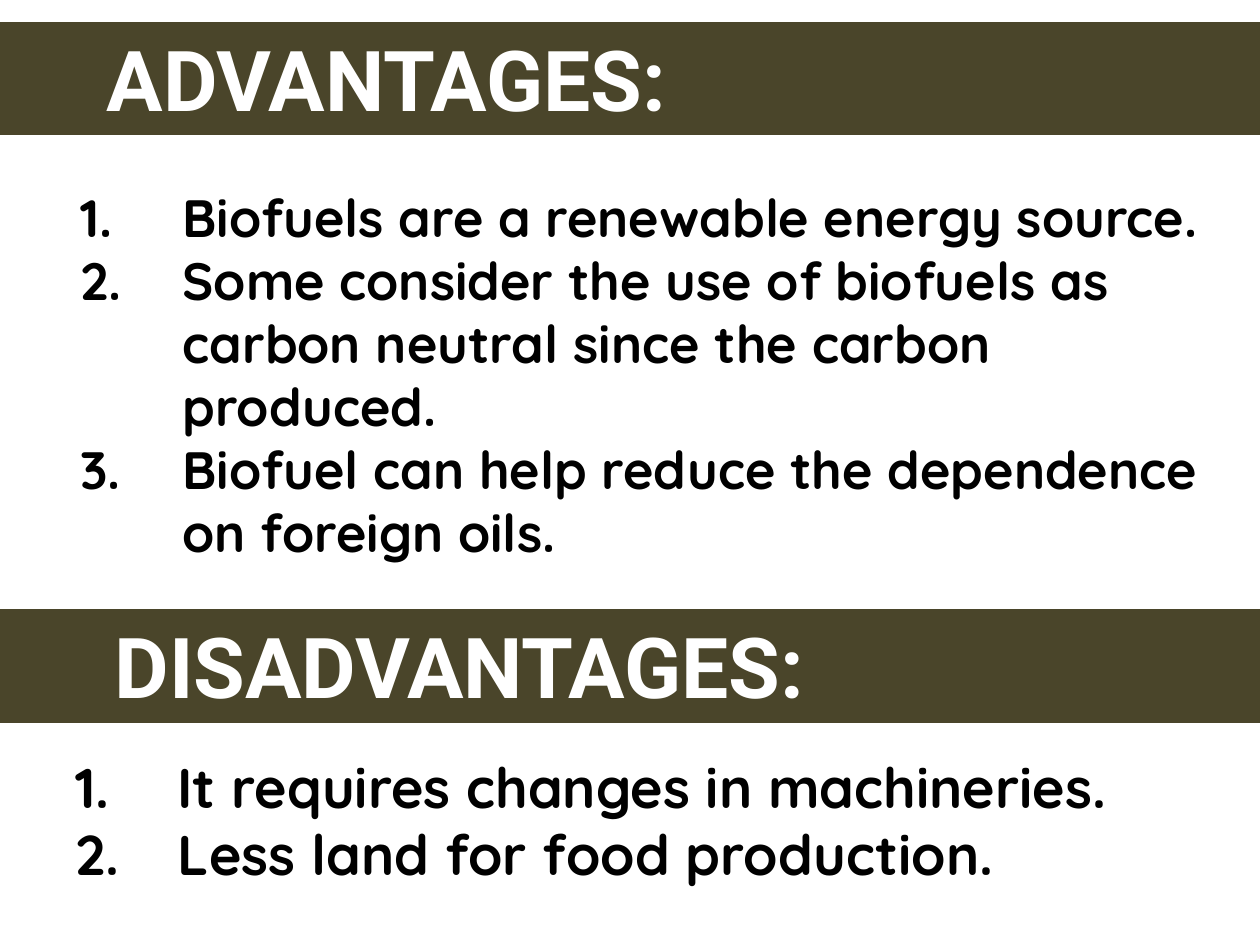
import pptx
import pptx.dml.color
import pptx.enum.shapes
import pptx.enum.text
import pptx.oxml.ns
import pptx.util
from lxml import etree
from pptx.util import Cm

BAND = "4A452A"
WHITE = "FFFFFF"
BLACK = "000000"


def color(hex_string):
    """Turn a hex string into a colour."""
    return pptx.dml.color.RGBColor.from_string(hex_string)


def add_child(parent, tag, **attributes):
    """Append a drawing element with the given attributes."""
    return etree.SubElement(parent, pptx.oxml.ns.qn(tag), attributes)


def add_box(slide, left, top, width, height, fill):
    """Add a filled, unshadowed rectangle with top-left wrapped text."""
    box = slide.shapes.add_shape(
        pptx.enum.shapes.MSO_SHAPE.RECTANGLE, Cm(left), Cm(top), Cm(width), Cm(height))
    box.shadow.inherit = False
    box.fill.solid()
    box.fill.fore_color.rgb = color(fill)
    box.text_frame.word_wrap = True
    box.text_frame.vertical_anchor = pptx.enum.text.MSO_ANCHOR.TOP
    return box


def style_paragraph(paragraph, font_name, size, hex_string):
    """Set left alignment and a bold font on a paragraph."""
    paragraph.alignment = pptx.enum.text.PP_ALIGN.LEFT
    paragraph.font.name = font_name
    paragraph.font.size = pptx.util.Pt(size)
    paragraph.font.bold = True
    paragraph.font.color.rgb = color(hex_string)


def add_heading(slide, left, top, width, title):
    """Add a dark band with a tabbed heading."""
    band = add_box(slide, left, top, width, 2.31, BAND)
    band.line.color.rgb = color(WHITE)
    band.line.width = pptx.util.Pt(0.75)
    heading = band.text_frame.paragraphs[0]
    heading.text = "\t" + title
    tabs = add_child(heading._p.get_or_add_pPr(), "a:tabLst")
    add_child(tabs, "a:tab", pos=str(Cm(2.54)), algn="l")
    style_paragraph(heading, "Roboto", 48, WHITE)


def add_numbered_list(slide, left, top, width, height, size, points):
    """Add a half-transparent panel with an automatically numbered list."""
    panel = add_box(slide, left, top, width, height, WHITE)
    panel.line.fill.background()
    panel_color = panel.fill._xPr.find(".//" + pptx.oxml.ns.qn("a:srgbClr"))
    add_child(panel_color, "a:alpha", val="50000")
    frame = panel.text_frame
    for index, point in enumerate(points):
        item = frame.add_paragraph() if index else frame.paragraphs[0]
        item.text = point
        item.level = 1
        properties = item._p.get_or_add_pPr()
        properties.set("marL", str(Cm(3.33)))
        properties.set("indent", str(Cm(-2.06)))
        add_child(properties, "a:buFont", typeface="+mj-lt")
        add_child(properties, "a:buAutoNum", type="arabicPeriod")
        style_paragraph(item, "Quicksand", size, BLACK)


def main():
    """Build the slide on the pros and cons of biofuels."""
    deck = pptx.Presentation()
    deck.slide_width, deck.slide_height = Cm(25.4), Cm(19.05)
    slide = deck.slides.add_slide(deck.slide_layouts[6])
    add_numbered_list(slide, 0.1, 3.61, 25.5, 7.95, 30, [
        "Biofuels are a renewable energy source.",
        "Some consider the use of biofuels as carbon neutral since the carbon produced.",
        "Biofuel can help reduce the dependence on foreign oils.",
    ])
    add_heading(slide, -0.64, 0.43, 26.47, "ADVANTAGES:")
    add_numbered_list(slide, 0, 15.04, 25.5, 3, 32, [
        "It requires changes in machineries.",
        "Less land for food production.",
    ])
    add_heading(slide, -0.48, 12.27, 26.67, "DISADVANTAGES:")
    deck.save("out.pptx")


if __name__ == "__main__":
    main()
